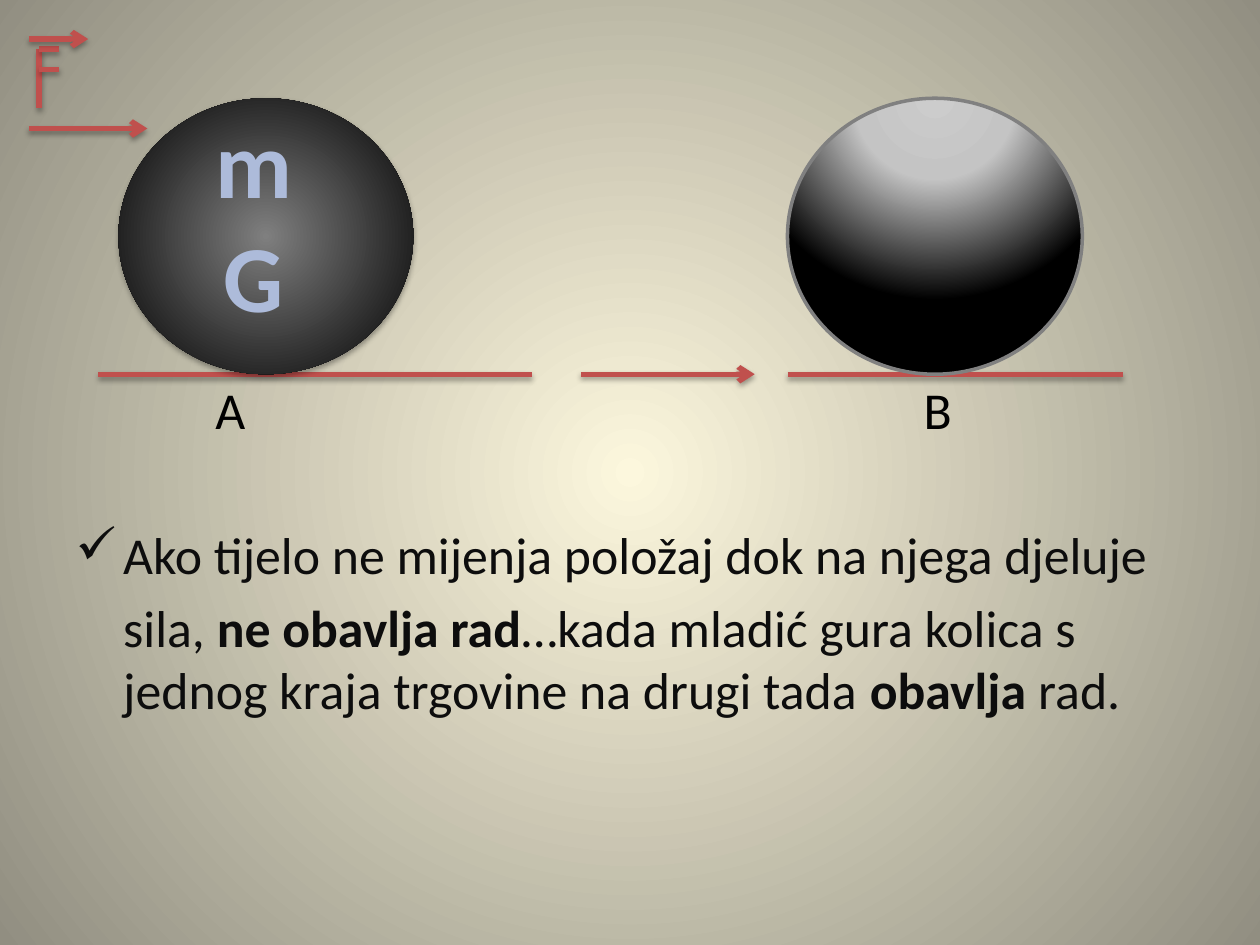
"""Build a slide on when a force does work on a body."""
from lxml import etree
from pptx import Presentation
from pptx.dml.color import RGBColor
from pptx.enum.shapes import MSO_CONNECTOR, MSO_SHAPE
from pptx.enum.text import PP_ALIGN
from pptx.oxml import parse_xml
from pptx.oxml.ns import nsdecls, qn
from pptx.util import Inches, Pt

STRAIGHT = MSO_CONNECTOR.STRAIGHT
OVAL = MSO_SHAPE.OVAL
LEFT, CENTER = PP_ALIGN.LEFT, PP_ALIGN.CENTER

FONT = "Calibri"
RED = "C0504D"
BLACK = "000000"
CENTRED = (50, 50, 50, 50)
BODY_SIZE = 29.6
INDENT = 0.38
GROUND = 2.97
BALL_TOP, BALL_WIDTH = 0.78, 2.34

BACKGROUND = [(0, "FCF7DD"), (100, "918E81")]
BALLS = [
    {"left": 0.94, "stops": [(0, "7F7F7F"), (100, BLACK)],
     "focus": CENTRED, "edge": None, "shadow": True},
    {"left": 6.25, "stops": [(0, "CCCCCC"), (40, "C4C4C4"), (100, BLACK)],
     "focus": (50, -80, 50, 180), "edge": "808080", "shadow": False},
]
GROUND_LINES = [
    (0.78, GROUND, 4.22, GROUND, False),
]
MOTION_LINES = [
    (4.61, GROUND, 5.99, GROUND, True),
    (6.25, GROUND, 8.91, GROUND, False),
]
FORCE_LINES = [
    (0.23, 1.02, 1.17, 1.02, True),
    (0.31, 0.39, 0.31, 0.86, False),
    (0.31, 0.39, 0.47, 0.39, False),
    (0.31, 0.55, 0.47, 0.55, False),
    (0.23, 0.31, 0.7, 0.31, True),
]
POSITIONS = [("A", 1.71), ("B", 7.33)]
BALL_LABELS = [[("m", True)], [("G", True)]]
EXPLANATION = [
    [("Ako tijelo ne mijenja položaj dok na njega djeluje", False)],
    [("sila, ", False), ("ne obavlja rad", True),
     ("…kada mladić gura kolica s jednog kraja trgovine na drugi tada ", False),
     ("obavlja", True), (" rad.", False)],
]


def color(value):
    return RGBColor.from_string(value)


def set_gradient(parent, stops, focus):
    """Swap the solid fill of parent for a circular gradient."""
    marks = "".join(
        f'<a:gs pos="{at * 1000}"><a:srgbClr val="{value}"/></a:gs>'
        for at, value in stops)
    sides = " ".join(f'{side}="{share * 1000}"' for side, share in zip("ltrb", focus))
    gradient = parse_xml(
        f'<a:gradFill {nsdecls("a")} rotWithShape="1"><a:gsLst>{marks}</a:gsLst>'
        f'<a:path path="circle"><a:fillToRect {sides}/></a:path></a:gradFill>')
    parent.replace(parent.find(qn("a:solidFill")), gradient)


def add_shadow(properties):
    """Add a soft shadow falling straight down."""
    properties.append(parse_xml(
        f'<a:effectLst {nsdecls("a")}><a:outerShdw blurRad="{Pt(3.1)}" '
        f'dist="{Pt(1.8)}" dir="5400000" rotWithShape="0"><a:srgbClr val="{BLACK}">'
        '<a:alpha val="35000"/></a:srgbClr></a:outerShdw></a:effectLst>'))


def add_lines(slide, lines):
    """Draw red lines, some with an arrowhead at the end."""
    for x1, y1, x2, y2, arrow in lines:
        line = slide.shapes.add_connector(
            STRAIGHT, Inches(x1), Inches(y1), Inches(x2), Inches(y2))
        line.line.color.rgb = color(RED)
        line.line.width = Pt(3)
        properties = line.element.spPr
        if arrow:
            etree.SubElement(properties.find(qn("a:ln")), qn("a:tailEnd"), type="arrow")
        add_shadow(properties)


def add_ball(slide, left, stops, focus, edge, shadow):
    """Draw a shaded ball resting on the ground."""
    ball = slide.shapes.add_shape(
        OVAL, Inches(left), Inches(BALL_TOP), Inches(BALL_WIDTH),
        Inches(GROUND - BALL_TOP))
    ball.fill.solid()
    set_gradient(ball.element.spPr, stops, focus)
    if edge:
        ball.line.color.rgb = color(edge)
        ball.line.width = Pt(2)
    else:
        ball.line.fill.background()
    if shadow:
        add_shadow(ball.element.spPr)
    else:
        ball.shadow.inherit = False


def add_text(slide, box, paragraphs, size, ink, align=LEFT, gap=0, **margins):
    """Add a text box of paragraphs made of (text, bold) runs."""
    frame = slide.shapes.add_textbox(*map(Inches, box)).text_frame
    frame.word_wrap = True
    for side, margin in margins.items():
        setattr(frame, side, Inches(margin))
    for index, runs in enumerate(paragraphs):
        paragraph = frame.add_paragraph() if index else frame.paragraphs[0]
        paragraph.alignment = align
        paragraph.space_before = Pt(gap if index else 0)
        for text, bold in runs:
            run = paragraph.add_run()
            run.text = text
            formats = {"name": FONT, "size": Pt(size), "bold": bold}
            for key, value in formats.items():
                setattr(run.font, key, value)
            run.font.color.rgb = color(ink)
    return frame


def main():
    deck = Presentation()
    deck.slide_width, deck.slide_height = Inches(10), Inches(7.5)
    slide = deck.slides.add_slide(deck.slide_layouts[6])
    slide.background.fill.solid()
    set_gradient(slide.element.find(".//" + qn("p:bgPr")), BACKGROUND, CENTRED)

    explanation = add_text(slide, (0.5, 4.1, 9, 1.8), EXPLANATION, BODY_SIZE,
                           "0D0D0D", gap=6)
    for paragraph in explanation.paragraphs:
        paragraph._p.get_or_add_pPr().set("marL", str(Inches(INDENT)))
    first = explanation.paragraphs[0]._p.get_or_add_pPr()
    first.set("indent", str(-Inches(INDENT)))
    etree.SubElement(first, qn("a:buFont"), typeface="Wingdings")
    etree.SubElement(first, qn("a:buChar"), char="ü")
    for name, left in POSITIONS:
        add_text(slide, (left, 3, 0.5, 0.5), [[(name, False)]], BODY_SIZE, BLACK,
                 margin_left=0, margin_right=0, margin_top=0, margin_bottom=0)

    left_ball, right_ball = BALLS
    add_lines(slide, GROUND_LINES)
    add_ball(slide, **left_ball)
    add_lines(slide, MOTION_LINES)
    add_ball(slide, **right_ball)
    add_text(slide, (1.48, 0.78, 1.07, 1.92), BALL_LABELS, 54, "ADBBDA", CENTER)
    add_lines(slide, FORCE_LINES)
    deck.save("out.pptx")


if __name__ == "__main__":
    main()
